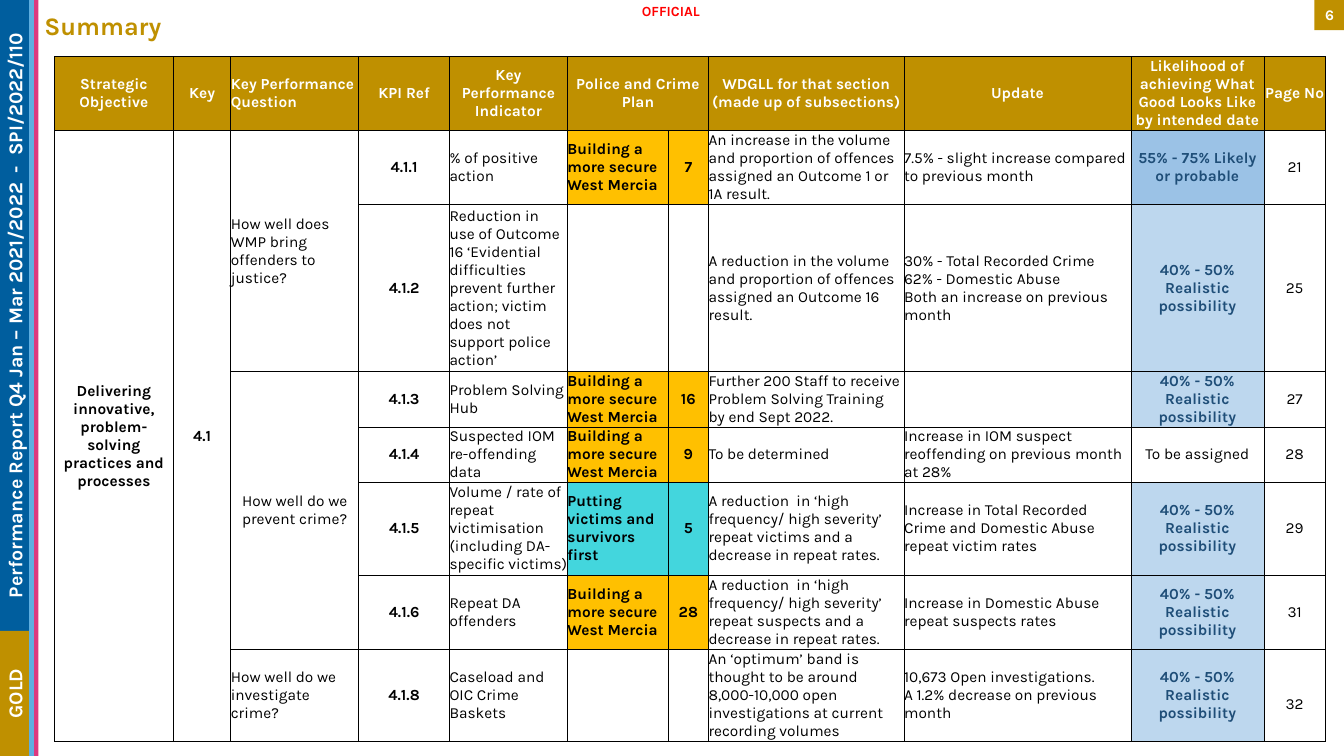
from lxml.etree import SubElement
from pptx import Presentation
from pptx.dml.color import RGBColor
from pptx.enum.shapes import MSO_SHAPE
from pptx.enum.text import MSO_ANCHOR, MSO_AUTO_SIZE, PP_ALIGN
from pptx.oxml.ns import qn
from pptx.util import Inches, Pt

FONT = "Karla"
BLACK, WHITE, GOLD, RED = "000000", "FFFFFF", "BF9000", "FF0000"
BLUE, SKY, PINK, NAVY = "005E9E", "5EAEE0", "DC397F", "1F4E78"
COLUMNS = [11.8, 5.7, 12.7, 9, 11.7, 10, 4, 19.4, 22.5, 13.2, 6.1]
ROWS = [7.34, 7.34, 16.57, 5.5, 5.5, 9.15, 7.34, 9.2]
CENTRED = {0, 1, 3, 6, 9, 10}
BOLD = {0, 1, 3, 5, 6}
SECURE = "Building a more secure West Mercia"
VICTIMS = "Putting victims and survivors first"
LIKELY = "55% - 75% Likely or probable"
REALISTIC = "40% - 50% Realistic possibility"
PREVENT = "How well do we prevent crime?"
PLAN_FILLS = {SECURE: "FFC000", VICTIMS: "43D6DD"}
LIKELIHOOD_FILLS = {LIKELY: "9BC2E6", REALISTIC: "BDD7EE"}
MERGES = [(0, 5, 0, 6), (1, 0, 7, 0), (1, 1, 7, 1), (1, 2, 2, 2), (3, 2, 6, 2)]

HEADINGS = [
    "Strategic Objective", "Key", "Key Performance Question", "KPI Ref",
    "Key Performance Indicator", "Police and Crime Plan", "",
    "WDGLL for that section (made up of subsections)", "Update",
    "Likelihood of achieving What Good Looks Like by intended date", "Page No",
]
INDICATORS = [
    ["Delivering innovative, problem-solving practices and processes", "4.1",
     "How well does WMP bring offenders to justice?", "4.1.1", "% of positive action",
     SECURE, "7",
     "An increase in the volume and proportion of offences assigned an Outcome 1 or 1A result.",
     "7.5% - slight increase compared to previous month", LIKELY, "21"],
    ["", "", "", "4.1.2",
     "Reduction in use of Outcome 16 ‘Evidential difficulties prevent further action; "
     "victim does not support police action’", "", "",
     "A reduction in the volume and proportion of offences assigned an Outcome 16 result.",
     "30% - Total Recorded Crime\n62% - Domestic Abuse\nBoth an increase on previous month",
     REALISTIC, "25"],
    ["", "", PREVENT, "4.1.3", "Problem Solving Hub", SECURE, "16",
     "Further 200 Staff to receive Problem Solving Training by end Sept 2022.",
     "", REALISTIC, "27"],
    ["", "", "", "4.1.4", "Suspected IOM re-offending data", SECURE, "9",
     "To be determined", "Increase in IOM suspect reoffending on previous month at 28%",
     "To be assigned", "28"],
    ["", "", "", "4.1.5",
     "Volume / rate of repeat victimisation (including DA-specific victims)", VICTIMS, "5",
     "A reduction  in ‘high frequency/ high severity’ repeat victims and a decrease in repeat rates.",
     "Increase in Total Recorded Crime and Domestic Abuse repeat victim rates",
     REALISTIC, "29"],
    ["", "", "", "4.1.6", "Repeat DA offenders", SECURE, "28",
     "A reduction  in ‘high frequency/ high severity’ repeat suspects and a decrease in repeat rates.",
     "Increase in Domestic Abuse repeat suspects rates", REALISTIC, "31"],
    ["", "", "How well do we investigate crime?", "4.1.8", "Caseload and OIC Crime Baskets",
     "", "",
     "An ‘optimum’ band is thought to be around 8,000-10,000 open investigations "
     "at current recording volumes",
     "10,673 Open investigations.\nA 1.2% decrease on previous month", REALISTIC, "32"],
]


def colour(value):
    return RGBColor.from_string(value)


def grid(*units):
    return [Inches(unit / 10) for unit in units]


class ReportPage:
    def __init__(self, deck):
        self.page = deck.slides.add_slide(deck.slide_layouts[5])
        self.page.background.fill.solid()
        self.page.background.fill.fore_color.rgb = colour(WHITE)

    def set_text(self, frame, text, size, ink, bold=True, align=PP_ALIGN.CENTER):
        para = frame.paragraphs[0]
        para.text = text
        para.alignment = align
        font = para.font
        font.name, font.size, font.bold = FONT, Pt(size), bold
        font.color.rgb = colour(ink)

    def title(self, text, *place):
        box = self.page.shapes.title
        box.left, box.top, box.width, box.height = grid(*place)
        frame = box.text_frame
        frame.auto_size = MSO_AUTO_SIZE.NONE
        frame.vertical_anchor = MSO_ANCHOR.MIDDLE
        self.set_text(frame, text, 18, GOLD, align=PP_ALIGN.LEFT)

    def label(self, text, size, ink, *place):
        frame = self.page.shapes.add_textbox(*grid(*place)).text_frame
        frame.word_wrap = True
        self.set_text(frame, text, size, ink)

    def band(self, fill, *place, text="", size=14, upright=True):
        box = self.page.shapes.add_shape(MSO_SHAPE.RECTANGLE, *grid(*place))
        box.shadow.inherit = False
        box.fill.solid()
        box.fill.fore_color.rgb = colour(fill)
        box.line.fill.background()
        if text:
            frame = box.text_frame
            frame.margin_left = frame.margin_right = 0
            frame.margin_top = frame.margin_bottom = 0
            frame.vertical_anchor = MSO_ANCHOR.MIDDLE
            self.set_text(frame, text, size, WHITE)
            if not upright:
                box.element.find(".//" + qn("a:bodyPr")).set("vert", "vert270")

    def borders(self, cell):
        properties = cell._tc.get_or_add_tcPr()
        for side in ("lnL", "lnR", "lnT", "lnB"):
            line = SubElement(properties, qn("a:" + side), w=str(Pt(0.5)))
            paint = SubElement(line, qn("a:solidFill"))
            SubElement(paint, qn("a:srgbClr"), val=BLACK)

    def cell(self, cell, text, fill, ink, bold, align):
        cell.margin_left = cell.margin_right = 0
        cell.margin_top = cell.margin_bottom = 0
        cell.vertical_anchor = MSO_ANCHOR.MIDDLE
        self.borders(cell)
        if fill:
            cell.fill.solid()
            cell.fill.fore_color.rgb = colour(fill)
        else:
            cell.fill.background()
        self.set_text(cell.text_frame, text, 11, ink, bold, align)

    def table(self, left, top):
        size = len(ROWS), len(COLUMNS)
        place = grid(left, top, sum(COLUMNS), sum(ROWS))
        table = self.page.shapes.add_table(*size, *place).table
        table.first_row = table.horz_banding = False
        for column, width in zip(table.columns, grid(*COLUMNS)):
            column.width = width
        for row, height in zip(table.rows, grid(*ROWS)):
            row.height = height
        for index, heading in enumerate(HEADINGS):
            align = PP_ALIGN.LEFT if index == 2 else PP_ALIGN.CENTER
            self.cell(table.cell(0, index), heading, GOLD, WHITE, True, align)
        for number, indicator in enumerate(INDICATORS, 1):
            plan = PLAN_FILLS.get(indicator[5])
            likelihood = LIKELIHOOD_FILLS.get(indicator[9])
            fills = {5: plan, 6: plan, 9: likelihood}
            for index, text in enumerate(indicator):
                rated = index == 9 and likelihood is not None
                centred = index in CENTRED or text == PREVENT
                self.cell(table.cell(number, index), text, fills.get(index),
                          NAVY if rated else BLACK, rated or index in BOLD,
                          PP_ALIGN.CENTER if centred else PP_ALIGN.LEFT)
        table.cell(len(INDICATORS), 10).margin_top = Inches(0.18)
        for top_row, first, bottom_row, last in MERGES:
            table.cell(top_row, first).merge(table.cell(bottom_row, last))


def main():
    deck = Presentation()
    deck.slide_width, deck.slide_height = grid(133.33, 75)
    report = ReportPage(deck)
    report.label("OFFICIAL", 10, RED, 58.8, -0.2, 15.5, 2.7)
    report.band(BLUE, -0.1, 0, 3.1, 62.6, upright=False,
                text="Performance Report Q4 Jan – Mar 2021/2022  -  SPI/2022/110")
    report.band(GOLD, -0.1, 62.6, 3.1, 12.4, text="GOLD", upright=False)
    report.band(SKY, 2.9, 0, 0.5, 75)
    report.band(PINK, 3.4, 0, 0.4, 75)
    report.title("Summary", 3.4, 0, 112.5, 5)
    report.band(GOLD, 130.4, 0, 3, 3, text="6", size=10.5)
    report.table(5.4, 5.6)
    deck.save("out.pptx")


if __name__ == "__main__":
    main()
